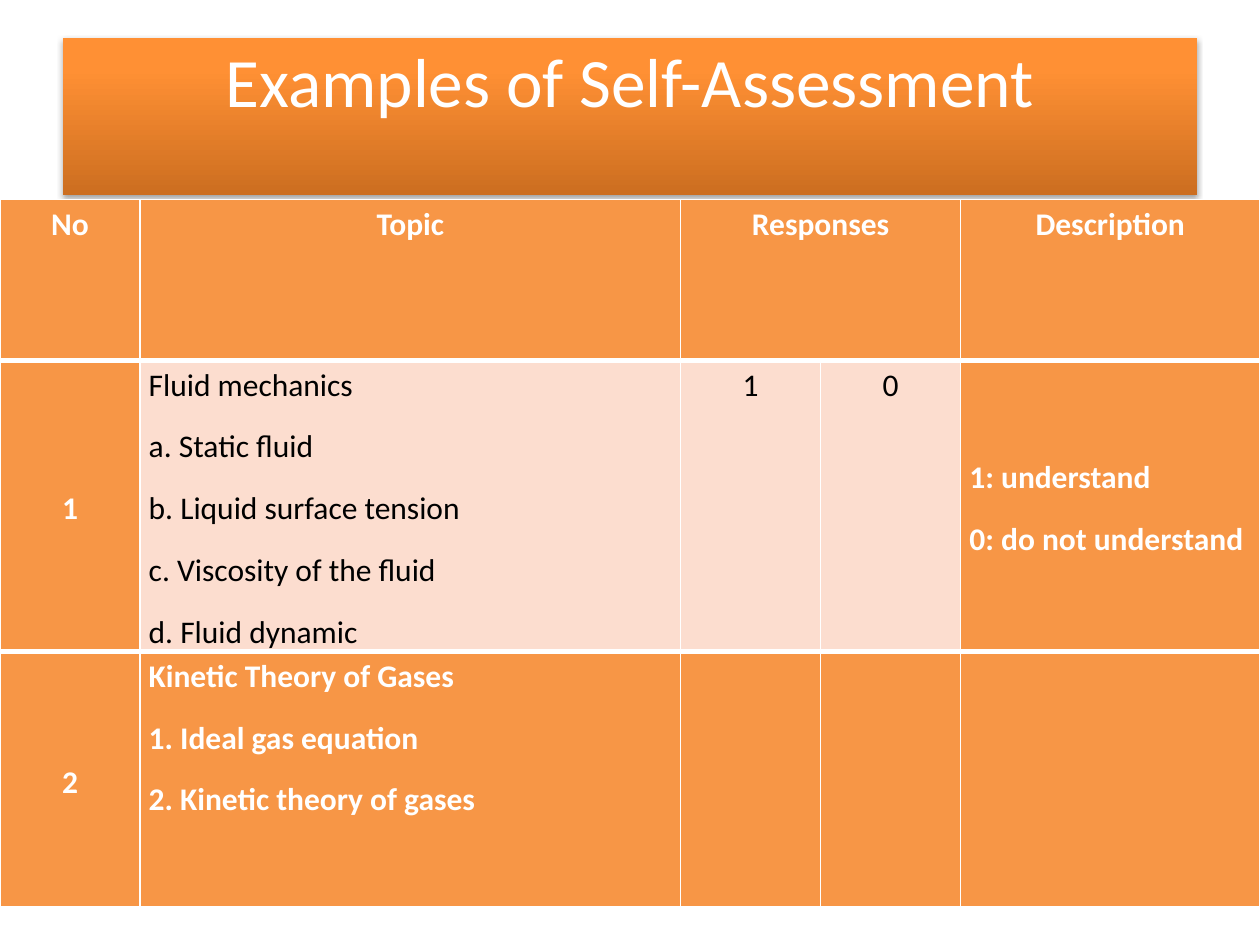
from copy import deepcopy

from lxml.etree import SubElement
from pptx import Presentation
from pptx.dml.color import RGBColor
from pptx.enum.text import MSO_ANCHOR, PP_ALIGN
from pptx.oxml.ns import qn
from pptx.util import Pt

COLORS = {
    "white": "FFFFFF", "black": "000000", "orange": "F79646", "peach": "FCDDCF",
    "title_dark": "CC6E20", "title_mid": "FF9034", "title_light": "FF9136",
}
TITLE_STOPS = [(0, "title_dark"), (0.8, "title_mid"), (1, "title_light")]
COLUMN_WIDTHS = [80, 309, 80, 80, 171]
ROW_HEIGHTS = [92, 166, 146]
TOPIC_COLUMN, DESCRIPTION_COLUMN = 1, 4

# Each cell is a list of paragraphs
ASSESSMENT = [
    [["No"], ["Topic"], ["Responses"], [], ["Description"]],
    [["1"],
     ["Fluid mechanics", "a. Static fluid", "b. Liquid surface tension",
      "c. Viscosity of the fluid", "d. Fluid dynamic"],
     ["1"], ["0"],
     ["1: understand", "0: do not understand"]],
    [["2"],
     ["Kinetic Theory of Gases", "1. Ideal gas equation", "2. Kinetic theory of gases"],
     [], [], []],
]


def color(name):
    return RGBColor.from_string(COLORS[name])


def apply(target, formats):
    for attribute, value in formats.items():
        setattr(target, attribute, value)


class AssessmentSlide:
    font_name = "Calibri"

    def __init__(self, deck):
        self.slide = deck.slides.add_slide(deck.slide_layouts[5])

    def style_font(self, font, size, color_name, bold=False):
        apply(font, {"name": self.font_name, "size": Pt(size), "bold": bold})
        font.color.rgb = color(color_name)

    def title(self, text, left, top, width, height):
        banner = self.slide.shapes.title
        apply(banner, {"left": Pt(left), "top": Pt(top),
                       "width": Pt(width), "height": Pt(height)})
        frame = banner.text_frame
        frame.text = text
        apply(frame, {"vertical_anchor": MSO_ANCHOR.TOP, "margin_top": 0,
                      "word_wrap": True})
        heading = frame.paragraphs[0]
        heading.alignment = PP_ALIGN.CENTER
        self.style_font(heading.runs[0].font, 39.6, "white")
        self.gradient(banner)
        self.shadow(banner)

    def gradient(self, banner):
        banner.fill.gradient()
        banner.fill.gradient_angle = 90
        stop_list = banner._element.spPr.find(f".//{qn('a:gsLst')}")
        stop_list.append(deepcopy(stop_list[-1]))
        for stop, (position, name) in zip(banner.fill.gradient_stops, TITLE_STOPS):
            stop.position = position
            stop.color.rgb = color(name)

    def shadow(self, banner):
        banner.shadow.inherit = False
        effects = banner._element.spPr.find(qn("a:effectLst"))
        outer = SubElement(effects, qn("a:outerShdw"), blurRad=str(Pt(3.1)),
                           dist=str(Pt(1.8)), dir="5400000", rotWithShape="0")
        shade = SubElement(outer, qn("a:srgbClr"), val=COLORS["black"])
        SubElement(shade, qn("a:alpha"), val="35000")

    def table(self, rows, left, top):
        grid = self.slide.shapes.add_table(
            len(rows), len(COLUMN_WIDTHS), Pt(left), Pt(top),
            Pt(sum(COLUMN_WIDTHS)), Pt(sum(ROW_HEIGHTS))).table
        for column, width in zip(grid.columns, COLUMN_WIDTHS):
            column.width = Pt(width)
        for row, height in zip(grid.rows, ROW_HEIGHTS):
            row.height = Pt(height)
        grid.cell(0, 2).merge(grid.cell(0, 3))
        for r, row in enumerate(rows):
            for c, lines in enumerate(row):
                self.cell(grid.cell(r, c), lines, r, c)

    def cell(self, cell, lines, r, c):
        # The middle row is light between its two outer columns
        light = r == 1 and c not in (0, DESCRIPTION_COLUMN)
        centred = r > 0 and (c == 0 or (r == 1 and c == DESCRIPTION_COLUMN))
        justified = r > 0 and c in (TOPIC_COLUMN, DESCRIPTION_COLUMN)
        apply(cell, {
            "margin_left": Pt(5), "margin_right": Pt(5),
            "margin_top": 0, "margin_bottom": 0,
            "vertical_anchor": MSO_ANCHOR.MIDDLE if centred else MSO_ANCHOR.TOP,
        })
        self.borders(cell, {"L": 1, "R": 1, "T": 3 if r else 1,
                            "B": 1 if r == len(ROW_HEIGHTS) - 1 else 3})
        cell.fill.solid()
        cell.fill.fore_color.rgb = color("peach" if light else "orange")
        if not lines:
            return
        cell.text = "\n".join(lines)
        for paragraph in cell.text_frame.paragraphs:
            apply(paragraph, {
                "alignment": PP_ALIGN.JUSTIFY if justified else PP_ALIGN.CENTER,
                "line_spacing": 1.15, "space_after": Pt(10),
            })
            self.style_font(paragraph.runs[0].font, 18,
                            "black" if light else "white", bold=not light)
        if c == TOPIC_COLUMN and r > 0:
            paragraph.space_after = Pt(0)

    def borders(self, cell, widths):
        properties = cell._tc.get_or_add_tcPr()
        for side, width in widths.items():
            line = SubElement(properties, qn(f"a:ln{side}"), w=str(Pt(width)))
            fill = SubElement(line, qn("a:solidFill"))
            SubElement(fill, qn("a:srgbClr"), val=COLORS["white"])


def main():
    deck = Presentation()
    apply(deck, {"slide_width": Pt(720), "slide_height": Pt(540)})
    page = AssessmentSlide(deck)
    # Banner
    page.title("Examples of Self-Assessment", 36, 21.6, 648, 90)
    # Self-assessment table
    page.table(ASSESSMENT, 0, 114)
    deck.save("out.pptx")


if __name__ == "__main__":
    main()
